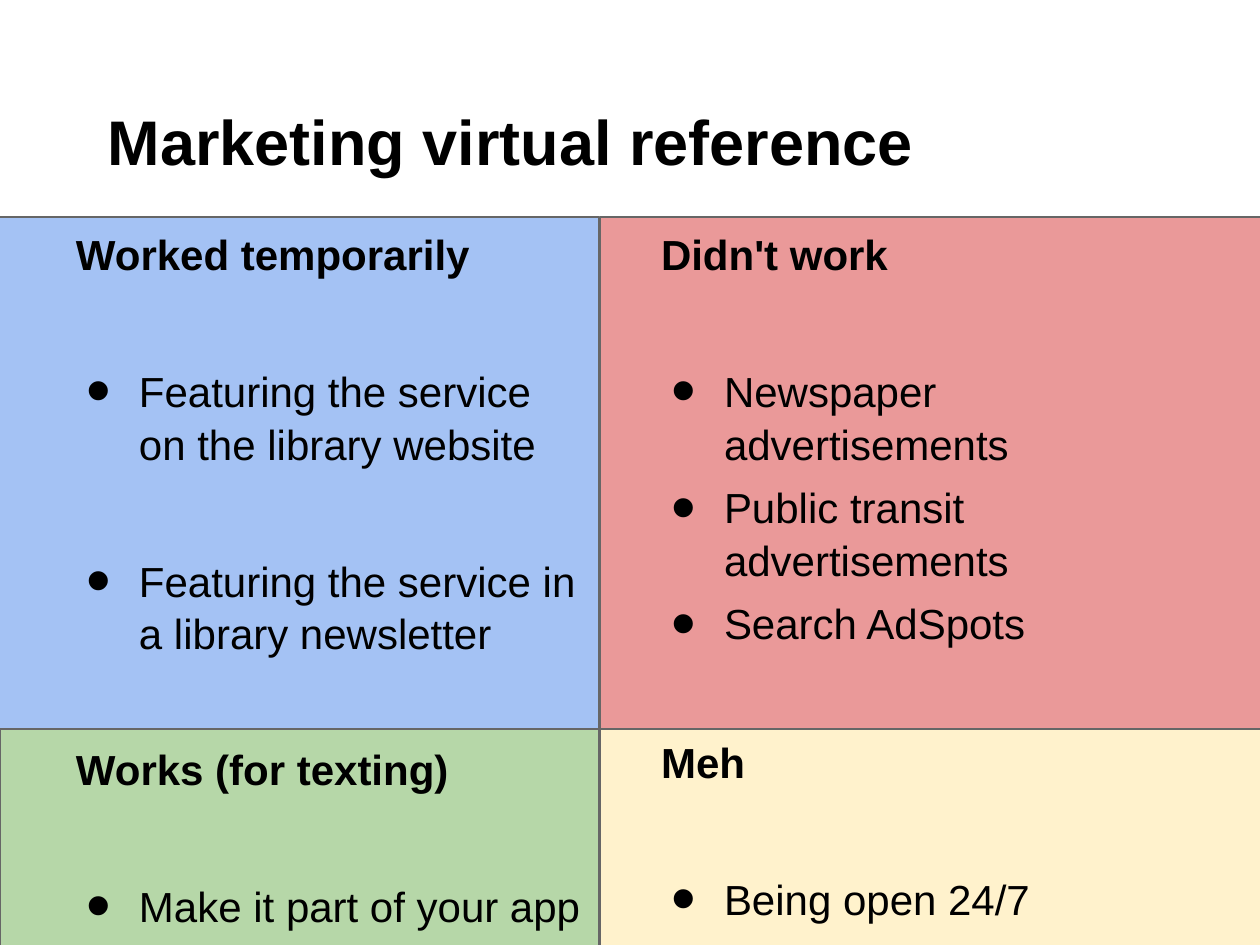
from dataclasses import dataclass

from lxml import etree
from pptx import Presentation
from pptx.dml.color import RGBColor
from pptx.enum import shapes, text
from pptx.oxml import ns
from pptx.util import Pt

EMU_PER_PX = 914400 / 126


@dataclass(frozen=True)
class Theme:
    font: str = "Arial"
    ink: str = "000000"
    border: str = "666666"
    blue: str = "A4C2F4"
    red: str = "EA9999"
    green: str = "B6D7A8"
    yellow: str = "FFF2CC"
    title_size: int = 36
    body_size: int = 24
    border_width: float = 1.5
    line_spacing: float = 1.05
    item_gap: int = 6
    section_gap: int = 48
    bullet_scale: int = 167


THEME = Theme()


def px(value):
    return round(value * EMU_PER_PX)


def add_panel(page, frame, color):
    panel = page.shapes.add_shape(shapes.MSO_SHAPE.RECTANGLE, *map(px, frame))
    panel.shadow.inherit = False
    panel.fill.solid()
    panel.fill.fore_color.rgb = RGBColor.from_string(color)
    panel.line.color.rgb = RGBColor.from_string(THEME.border)
    panel.line.width = Pt(THEME.border_width)


def add_text_frame(page, frame, anchor):
    box = page.shapes.add_textbox(*map(px, frame))
    content = box.text_frame
    content.word_wrap = True
    content.vertical_anchor = anchor
    content.margin_left = content.margin_right = px(13)
    content.margin_top = content.margin_bottom = px(13)
    return content


def add_span(para, wording, size, bold):
    span = para.add_run()
    span.text = wording
    span.font.name = THEME.font
    span.font.size = Pt(size)
    span.font.bold = bold
    span.font.color.rgb = RGBColor.from_string(THEME.ink)


def set_indent(para, left, first):
    properties = para._p.get_or_add_pPr()
    properties.set("marL", str(px(left)))
    properties.set("indent", str(px(first)))
    return properties


def add_bullet(para):
    properties = set_indent(para, 63, -53)
    color = etree.SubElement(properties, ns.qn("a:buClr"))
    etree.SubElement(color, ns.qn("a:srgbClr"), val=THEME.ink)
    etree.SubElement(properties, ns.qn("a:buSzPct"), val=str(THEME.bullet_scale * 1000))
    etree.SubElement(properties, ns.qn("a:buFont"), typeface=THEME.font)
    etree.SubElement(properties, ns.qn("a:buChar"), char="•")


def add_title(page, wording):
    content = add_text_frame(page, (63, 33, 1134, 158), text.MSO_ANCHOR.BOTTOM)
    para = content.paragraphs[0]
    set_indent(para, 0, 32)
    add_span(para, wording, THEME.title_size, True)


def add_list(page, frame, heading, items, gap):
    content = add_text_frame(page, frame, text.MSO_ANCHOR.TOP)
    para = content.paragraphs[0]
    para.space_before = Pt(THEME.item_gap)
    para.line_spacing = THEME.line_spacing
    set_indent(para, 48, -48)
    add_span(para, heading, THEME.body_size, True)
    for index, item in enumerate(items):
        para = content.add_paragraph()
        para.space_before = Pt(gap if index else THEME.section_gap)
        para.line_spacing = THEME.line_spacing
        add_bullet(para)
        add_span(para, item, THEME.body_size, False)


def main():
    deck = Presentation()
    deck.slide_width, deck.slide_height = px(1260), px(945)
    page = deck.slides.add_slide(deck.slide_layouts[6])

    left, middle, top, divider = -1, 600, 217, 728
    left_width, right_width = 600, 665
    top_height, bottom_height = 512, 239
    add_panel(page, (0, divider, left_width - 1, bottom_height), THEME.green)
    add_panel(page, (middle, divider, right_width, bottom_height), THEME.yellow)
    add_panel(page, (middle, top, right_width, top_height), THEME.red)
    add_panel(page, (left, top, left_width, top_height), THEME.blue)

    add_title(page, "Marketing virtual reference")
    left_text, right_text, text_width = 63, 648, 537
    add_list(page, (right_text, 213, text_width, 509), "Didn't work",
             ["Newspaper advertisements", "Public transit advertisements",
              "Search AdSpots"], THEME.item_gap)
    add_list(page, (left_text, 213, text_width, 500), "Worked temporarily",
             ["Featuring the service on the library website",
              "Featuring the service in a library newsletter"], THEME.section_gap)
    add_list(page, (right_text, 721, text_width, 224), "Meh",
             ["Being open 24/7"], THEME.item_gap)
    add_list(page, (left_text, 728, text_width, 224), "Works (for texting)",
             ["Make it part of your app"], THEME.item_gap)

    deck.save("out.pptx")


if __name__ == "__main__":
    main()
